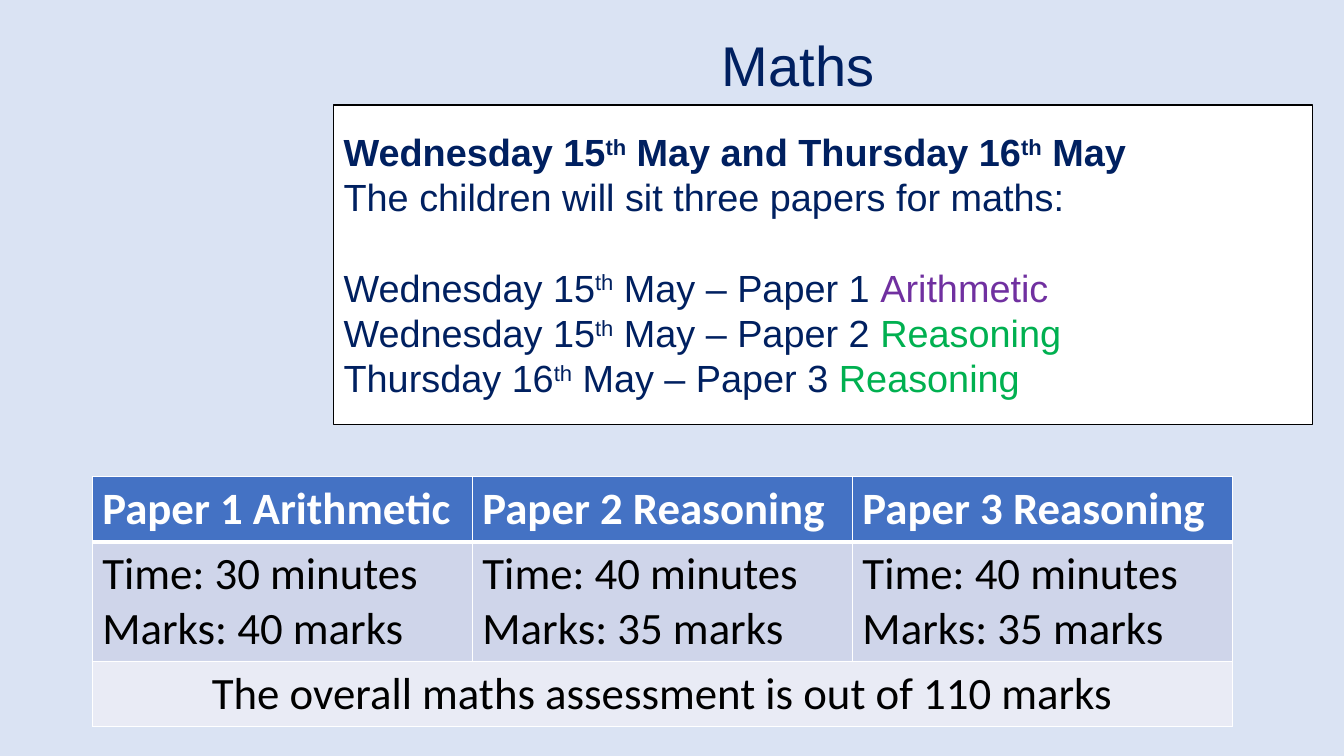
import pptx
import pptx.util
import pptx.dml.color
import pptx.enum.shapes
import pptx.enum.text
import pptx.oxml
import pptx.oxml.ns

RGBColor = pptx.dml.color.RGBColor
NAVY = RGBColor(0x00, 0x20, 0x60)
PURPLE = RGBColor(0x70, 0x30, 0xA0)
GREEN = RGBColor(0x00, 0xB0, 0x50)
BLACK = RGBColor(0x00, 0x00, 0x00)
WHITE = RGBColor(0xFF, 0xFF, 0xFF)
PALE_BLUE = RGBColor(0xDA, 0xE3, 0xF3)
HEADER_BLUE = RGBColor(0x44, 0x72, 0xC4)
BAND_DARK = RGBColor(0xCF, 0xD5, 0xEA)
BAND_LIGHT = RGBColor(0xE9, 0xEB, 0xF5)

ALIGN = pptx.enum.text.PP_ALIGN
MIDDLE = pptx.enum.text.MSO_ANCHOR.MIDDLE
PLAIN_TABLE = "{2D5ABB26-0587-4C30-8999-92F81FD0307C}"
HEADER_BORDERS = {"lnL": 1, "lnR": 1, "lnT": 1, "lnB": 3}

DATES = [("Wednesday 15", ""), ("th", "raised"), (" May and Thursday 16", ""),
         ("th", "raised"), (" May", "")]
PAPERS = [("Wednesday 15", 1, "Arithmetic", PURPLE, 30, 40),
          ("Wednesday 15", 2, "Reasoning", GREEN, 40, 35),
          ("Thursday 16", 3, "Reasoning", GREEN, 40, 35)]


class SlideBuilder:
    heading_font = "Arial"
    table_font = "Calibri"
    grid = pptx.util.Inches(0.1)

    def __init__(self, deck):
        self.page = deck.slides.add_slide(deck.slide_layouts[6])
        self.page.background.fill.solid()
        self.page.background.fill.fore_color.rgb = PALE_BLUE

    def units(self, *lengths):
        return [round(length * self.grid) for length in lengths]

    def style(self, font, name, size, color, bold=False):
        font.name = name
        font.size = pptx.util.Pt(size)
        font.color.rgb = color
        font.bold = bold

    def table(self, place, heights, columns):
        shape = self.page.shapes.add_table(len(heights), columns, *self.units(*place))
        for row, height in zip(shape.table.rows, self.units(*heights)):
            row.height = height
        return shape.table

    def title(self, text, place):
        table = self.table(place, place[3:], 1)
        table.first_row = table.horz_banding = False
        style_id = table._tbl.tblPr.find(pptx.oxml.ns.qn("a:tableStyleId"))
        style_id.text = PLAIN_TABLE
        cell = table.cell(0, 0)
        cell.fill.background()
        cell.vertical_anchor = MIDDLE
        cell.text_frame.text = text
        para = cell.text_frame.paragraphs[0]
        para.alignment = ALIGN.CENTER
        self.style(para.runs[0].font, self.heading_font, 40, NAVY)

    def panel(self, place):
        box = self.page.shapes.add_shape(
            pptx.enum.shapes.MSO_SHAPE.RECTANGLE, *self.units(*place))
        box.shadow.inherit = False
        box.fill.solid()
        box.fill.fore_color.rgb = WHITE
        box.line.color.rgb = BLACK
        box.line.width = pptx.util.Pt(1)
        box.text_frame.word_wrap = True
        box.text_frame.vertical_anchor = MIDDLE
        return box

    def line(self, para, spans, bold=False, gap=0):
        para.alignment = ALIGN.LEFT
        para.space_before = pptx.util.Pt(gap)
        for text, look in spans:
            span = para.add_run()
            span.text = text
            color = look if isinstance(look, RGBColor) else NAVY
            self.style(span.font, self.heading_font, 27, color, bold)
            if look == "raised":
                span._r.get_or_add_rPr().set("baseline", "30000")

    def cell(self, cell, text, fill, color=BLACK, bold=False, align=ALIGN.LEFT):
        cell.text_frame.text = text
        for para in cell.text_frame.paragraphs:
            para.alignment = align
            for span in para.runs:
                self.style(span.font, self.table_font, 32, color, bold)
        cell.fill.solid()
        cell.fill.fore_color.rgb = fill

    def borders(self, cell, widths):
        properties = cell._tc.get_or_add_tcPr()
        for position, (side, points) in enumerate(widths.items()):
            properties.insert(position, pptx.oxml.parse_xml(
                f'<a:{side} {pptx.oxml.ns.nsdecls("a")} w="{pptx.util.Pt(points)}">'
                f'<a:solidFill><a:srgbClr val="{WHITE}"/></a:solidFill></a:{side}>'))


def main():
    deck = pptx.Presentation()
    deck.slide_width = pptx.util.Inches(13.33)
    deck.slide_height = pptx.util.Inches(7.5)
    builder = SlideBuilder(deck)

    builder.title("Maths", (38.1, 2.8, 82.1, 7.7))

    frame = builder.panel((33.1, 10.4, 97.1, 31.7)).text_frame
    builder.line(frame.paragraphs[0], DATES, bold=True)
    builder.line(frame.add_paragraph(),
                 [("The children will sit three papers for maths:", "")])

    heights = (6.4, 11.7, 6.4)
    table = builder.table((9.15, 47.3, 113.1, sum(heights)), heights, len(PAPERS))
    for column, (day, number, topic, color, minutes, marks) in enumerate(PAPERS):
        spans = [(day, ""), ("th", "raised"),
                 (f" May – Paper {number} ", ""), (topic, color)]
        builder.line(frame.add_paragraph(), spans, gap=0 if column else 32)
        header = table.cell(0, column)
        builder.cell(header, f"Paper {number} {topic}", HEADER_BLUE, WHITE, bold=True)
        builder.borders(header, HEADER_BORDERS)
        builder.cell(table.cell(1, column),
                     f"Time: {minutes} minutes\nMarks: {marks} marks", BAND_DARK)

    table.cell(2, 0).merge(table.cell(2, len(PAPERS) - 1))
    total = sum(paper[-1] for paper in PAPERS)
    builder.cell(table.cell(2, 0), f"The overall maths assessment is out of {total} marks",
                 BAND_LIGHT, align=ALIGN.CENTER)

    deck.save("out.pptx")


if __name__ == "__main__":
    main()
